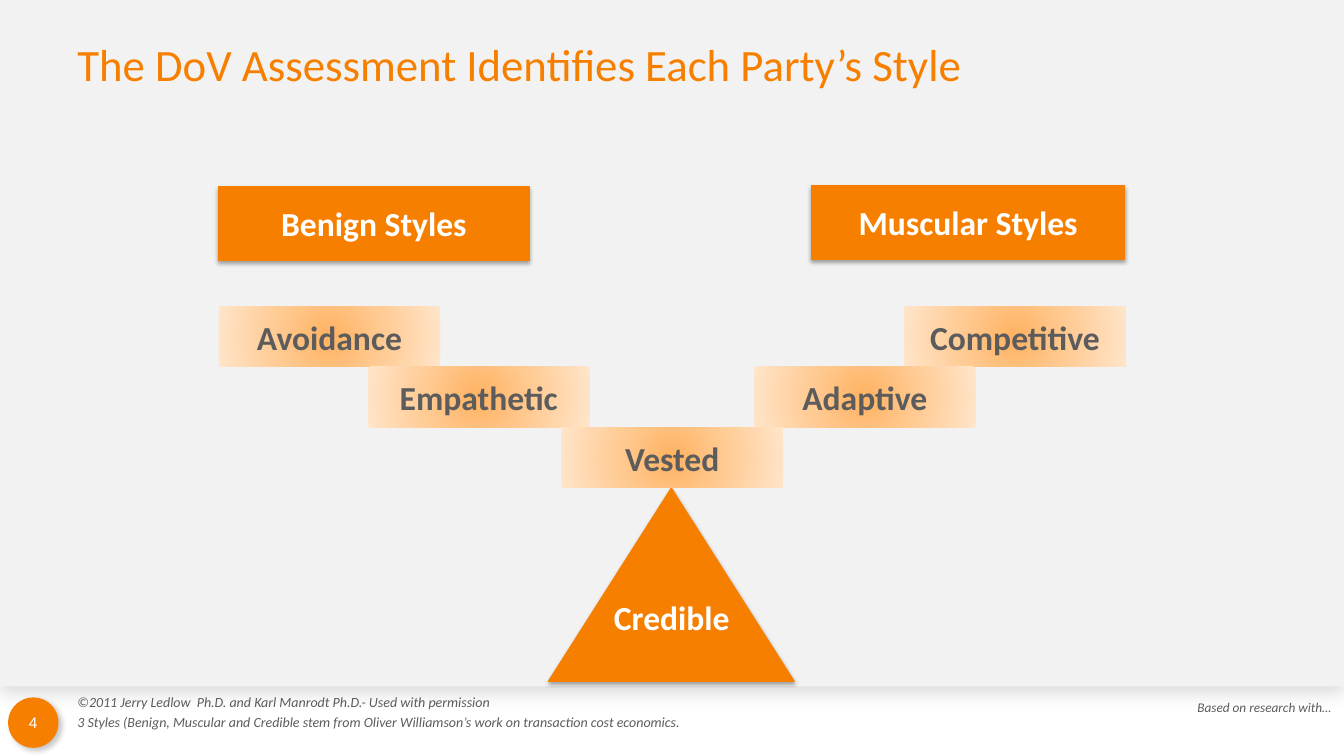
"""Build the slide on the styles that the DoV assessment identifies."""
from dataclasses import dataclass
from typing import NamedTuple, Optional

import lxml.etree
import pptx
import pptx.dml.color
import pptx.enum.shapes
import pptx.enum.text
import pptx.oxml.ns
import pptx.util

Pt = pptx.util.Pt
Preset = pptx.enum.shapes.MSO_SHAPE
Align = pptx.enum.text.PP_ALIGN
Anchor = pptx.enum.text.MSO_ANCHOR
qn = pptx.oxml.ns.qn


@dataclass(frozen=True)
class Theme:
    accent: str = "F77F00"
    panel: str = "F2F2F2"
    grey: str = "5C5C5C"
    white: str = "FFFFFF"
    shadow: str = "000000"
    glow: tuple = ((0, "FFB261"), (50, "FFCC96"), (100, "FFE5CA"))
    font: str = "Calibri"
    number_font: str = "Arial"
    title_size: float = 32
    label_size: float = 24
    number_size: float = 11
    note_size: float = 10
    credit_size: float = 9.5


class Box(NamedTuple):
    left: float
    top: float
    width: float
    height: float

    def lengths(self) -> list:
        return [Pt(value) for value in self]


class Shadow(NamedTuple):
    opacity: int
    blur: float
    distance: float
    angle: int


class Header(NamedTuple):
    text: str
    box: Box


class Style(NamedTuple):
    text: str
    left: float
    step: int


THEME = Theme()
PANEL_SHADOW = Shadow(15, 14, 5, 90)
BADGE_SHADOW = Shadow(22, 4, 3, 45)
BLOCK_SHADOW = Shadow(35, 3.1, 1.8, 90)

HEADERS = (
    Header("Benign Styles", Box(156.2, 133.2, 221.8, 52.6)),
    Header("Muscular Styles", Box(579.6, 132.5, 224, 52.6)),
)
STYLES = (
    Style("Avoidance", 156.2, 0),
    Style("Empathetic", 262.8, 1),
    Style("Competitive", 645.8, 0),
    Style("Adaptive", 538.6, 1),
    Style("Vested", 401, 2),
)
STYLE_TOP, STYLE_WIDTH, STYLE_HEIGHT = 218.9, 158.4, 43.2
NOTES = (
    "©2011 Jerry Ledlow  Ph.D. and Karl Manrodt Ph.D.- Used with permission\n"
    "3 Styles (Benign, Muscular and Credible stem from Oliver Williamson’s work "
    "on transaction cost economics."
)


def rgb(color: str) -> pptx.dml.color.RGBColor:
    """Turn a hexadecimal string into a colour."""
    return pptx.dml.color.RGBColor.from_string(color)


def add_color(parent, color: str):
    """Append a colour element to an XML parent."""
    return lxml.etree.SubElement(parent, qn("a:srgbClr"), val=color)


def add_shadow(shape, shadow: Shadow) -> None:
    """Give a shape an outer shadow."""
    effects = shape._element.spPr.find(qn("a:effectLst"))
    outer = lxml.etree.SubElement(
        effects, qn("a:outerShdw"), blurRad=str(Pt(shadow.blur)),
        dist=str(Pt(shadow.distance)), dir=str(shadow.angle * 60000),
        algn="ctr", rotWithShape="0")
    color = add_color(outer, THEME.shadow)
    lxml.etree.SubElement(color, qn("a:alpha"), val=str(shadow.opacity * 1000))


def fill_glow(shape) -> None:
    """Fill a shape with the radial gradient of the theme."""
    shape.fill.gradient()
    gradient = shape._element.spPr.find(qn("a:gradFill"))
    for child in list(gradient):
        gradient.remove(child)
    stops = lxml.etree.SubElement(gradient, qn("a:gsLst"))
    for position, color in THEME.glow:
        add_color(lxml.etree.SubElement(stops, qn("a:gs"), pos=str(position * 1000)), color)
    radial = lxml.etree.SubElement(gradient, qn("a:path"), path="circle")
    lxml.etree.SubElement(
        radial, qn("a:fillToRect"), l="50000", t="50000", r="50000", b="50000")


def add_block(slide, preset, box: Box, *, fill: Optional[str] = None,
              outlined: bool = False, shadow: Optional[Shadow] = None):
    """Add a preset shape, with the gradient when no fill is given."""
    shape = slide.shapes.add_shape(preset, *box.lengths())
    shape.shadow.inherit = False
    if fill:
        shape.fill.solid()
        shape.fill.fore_color.rgb = rgb(fill)
    else:
        fill_glow(shape)
    if outlined:
        shape.line.color.rgb = rgb(THEME.accent)
        shape.line.width = Pt(0.75)
    else:
        shape.line.fill.background()
    if shadow:
        add_shadow(shape, shadow)
    return shape


def write(shape, text: str, *, size: float = THEME.label_size, color: str = THEME.grey,
          font: str = THEME.font, bold: bool = False, italic: bool = False,
          align=Align.LEFT, anchor=Anchor.MIDDLE, wrap: bool = True,
          gap: float = 0, line_spacing: Optional[float] = None) -> None:
    """Write one paragraph for each line of the text."""
    frame = shape.text_frame
    frame.word_wrap = wrap
    frame.vertical_anchor = anchor
    frame.text = text
    for index, paragraph in enumerate(frame.paragraphs):
        paragraph.alignment = align
        paragraph.line_spacing = line_spacing
        if index:
            paragraph.space_before = Pt(gap)
        paragraph.font.name = font
        paragraph.font.size = Pt(size)
        paragraph.font.bold = bold
        paragraph.font.italic = italic
        paragraph.font.color.rgb = rgb(color)


def add_text(slide, box: Box, text: str, **style) -> None:
    """Add a text box with formatted text."""
    write(slide.shapes.add_textbox(*box.lengths()), text, **style)


def main() -> None:
    """Draw the slide and save it."""
    presentation = pptx.Presentation()
    presentation.slide_width, presentation.slide_height = Pt(960), Pt(540)
    slide = presentation.slides.add_slide(presentation.slide_layouts[6])

    add_block(slide, Preset.RECTANGLE, Box(0, 0, 960, 490.3),
              fill=THEME.panel, shadow=PANEL_SHADOW)
    add_text(slide, Box(848.2, 496.1, 110.9, 18.7), "Based on research with…",
             size=THEME.credit_size, italic=True, anchor=Anchor.TOP, wrap=False)
    badge = add_block(slide, Preset.OVAL, Box(5.8, 498.2, 36, 36),
                      fill=THEME.accent, shadow=BADGE_SHADOW)
    write(badge, "4", size=THEME.number_size, color=THEME.white,
          font=THEME.number_font, align=Align.CENTER)
    add_text(slide, Box(48.2, 14.4, 864, 61.9),
             "The DoV Assessment Identifies Each Party’s Style",
             size=THEME.title_size, color=THEME.accent)

    add_block(slide, Preset.ISOSCELES_TRIANGLE, Box(391.7, 348.5, 175.7, 138.2),
              fill=THEME.accent, outlined=True, shadow=BLOCK_SHADOW)
    for header in HEADERS:
        block = add_block(slide, Preset.RECTANGLE, header.box, fill=THEME.accent,
                          outlined=True, shadow=BLOCK_SHADOW)
        write(block, header.text, color=THEME.white, bold=True, align=Align.CENTER)
    for style in STYLES:
        top = STYLE_TOP + style.step * STYLE_HEIGHT
        block = add_block(slide, Preset.RECTANGLE,
                          Box(style.left, top, STYLE_WIDTH, STYLE_HEIGHT))
        write(block, style.text, bold=True, align=Align.CENTER)
    add_text(slide, Box(421.2, 428.4, 117.4, 31.7), "Credible", color=THEME.white,
             bold=True, align=Align.CENTER, anchor=Anchor.TOP, line_spacing=0.8)
    add_text(slide, Box(48.2, 491.8, 532.1, 17.3), NOTES, size=THEME.note_size,
             italic=True, anchor=Anchor.TOP, gap=2)
    presentation.save("out.pptx")


if __name__ == "__main__":
    main()
